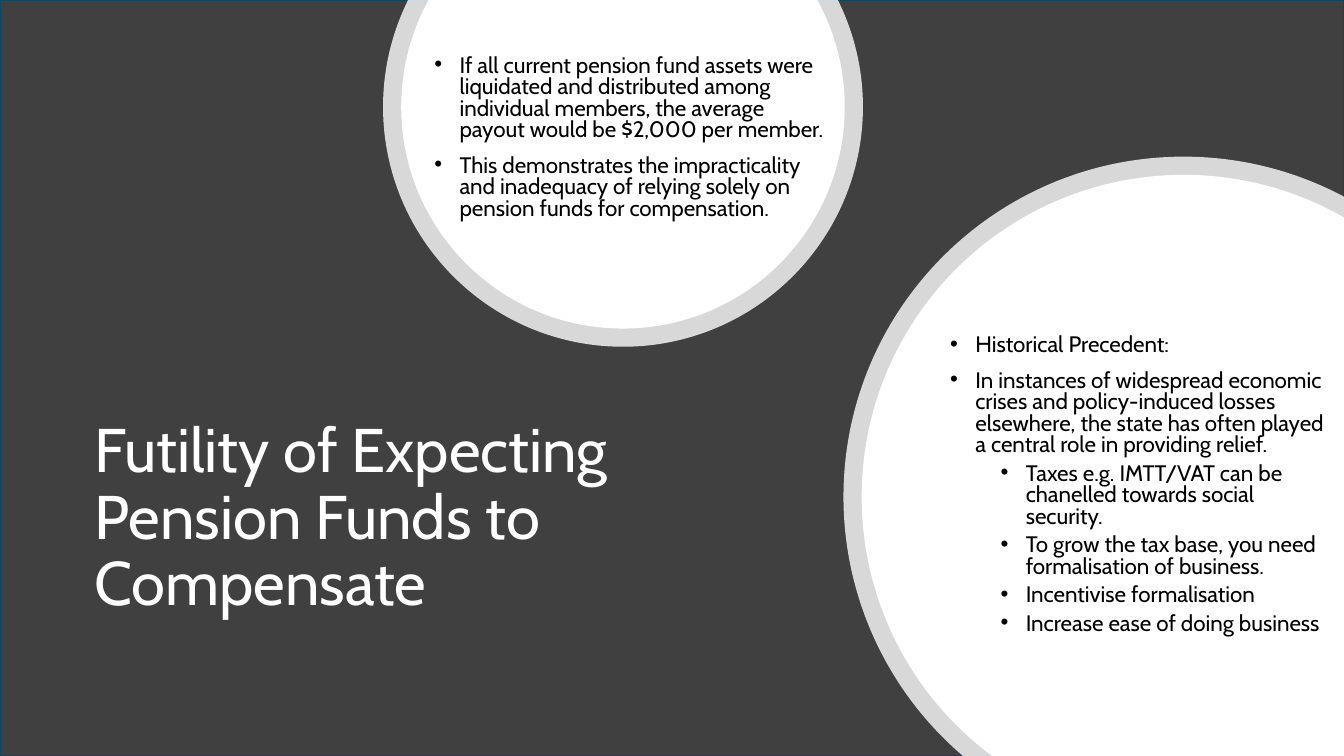
import math

import pptx
import pptx.dml.color
import pptx.enum.shapes
import pptx.enum.text
import pptx.oxml
import pptx.oxml.ns
import pptx.util

Pt = pptx.util.Pt
RGBColor = pptx.dml.color.RGBColor

CHARCOAL = RGBColor(0x40, 0x40, 0x40)
TEAL = RGBColor(0x10, 0x47, 0x60)
WHITE = RGBColor(0xFF, 0xFF, 0xFF)
BLACK = RGBColor(0, 0, 0)
FONT = "Cabin"

TITLE = "Futility of Expecting Pension Funds to Compensate"
TITLE_BOX = (60.3, 275.4, 476.6, 190.8)

CIRCLES = [
    {
        "center": (445, 76.3),
        "radius": 171.4,
        "box": (303.2, 10.3, 293, 177.1),
        "points": [
            (0, "If all current pension fund assets were liquidated and distributed "
                "among individual members, the average payout would be $2,000 per member."),
            (0, "This demonstrates the impracticality and inadequacy of relying "
                "solely on pension funds for compensation."),
        ],
    },
    {
        "center": (845.6, 355),
        "radius": 243.1,
        "box": (671.6, 212.9, 288.7, 267.8),
        "points": [
            (0, "Historical Precedent:"),
            (0, "In instances of widespread economic crises and policy-induced losses "
                "elsewhere, the state has often played a central role in providing relief."),
            (1, "Taxes e.g. IMTT/VAT can be chanelled towards social security."),
            (1, "To grow the tax base, you need formalisation of business."),
            (1, "Incentivise formalisation"),
            (1, "Increase ease of doing business"),
        ],
    },
]

WIDTH, HEIGHT = 960, 540
RING = 13
RING_OPACITY = 80
QUARTER = math.pi / 2


def visible_arc(center, radius):
    x, y = center
    if y < radius:
        rise = math.asin(y / radius)
        return -rise, math.pi + rise, []
    start = math.pi - math.asin((HEIGHT - y) / radius)
    end = 2 * math.pi - math.acos((WIDTH - x) / radius)
    return start, end, [(Pt(WIDTH), Pt(HEIGHT))]


def curve_points(center, radius, start, end):
    quarters = [n * QUARTER for n in range(4) if start < n * QUARTER < end]
    stops = [start, *quarters, end]

    def place(angle, pull):
        return (Pt(center[0] + radius * (math.cos(angle) - pull * math.sin(angle))),
                Pt(center[1] + radius * (math.sin(angle) + pull * math.cos(angle))))

    points = [place(start, 0)]
    for first, last in zip(stops, stops[1:]):
        pull = 4 / 3 * math.tan((last - first) / 4)
        points += [place(first, pull), place(last, -pull), place(last, 0)]
    return points


def add_disc(slide, center, radius, opacity=100):
    start, end, corners = visible_arc(center, radius)
    curve = curve_points(center, radius, start, end)
    builder = slide.shapes.build_freeform(*curve[0])
    builder.add_line_segments(curve[1:] + corners, close=True)
    disc = builder.convert_to_shape()

    lines = disc._element.findall(".//" + pptx.oxml.ns.qn("a:lnTo"))
    for index in range(0, len(curve) - 1, 3):
        bend = pptx.oxml.parse_xml(
            f'<a:cubicBezTo {pptx.oxml.ns.nsdecls("a")}/>')
        lines[index].addprevious(bend)
        for line in lines[index:index + 3]:
            bend.append(line[0])
            line.getparent().remove(line)

    disc.shadow.inherit = False
    disc.line.fill.background()
    disc.fill.solid()
    disc.fill.fore_color.rgb = WHITE
    if opacity < 100:
        tint = disc.fill._xPr.find(".//" + pptx.oxml.ns.qn("a:srgbClr"))
        tint.append(pptx.oxml.parse_xml(
            f'<a:alpha {pptx.oxml.ns.nsdecls("a")} val="{opacity * 1000}"/>'))


def add_frame(slide, box):
    frame = slide.shapes.add_textbox(*map(Pt, box)).text_frame
    frame.word_wrap = True
    frame.vertical_anchor = pptx.enum.text.MSO_ANCHOR.MIDDLE
    return frame


def add_words(paragraph, words, size, color, spacing):
    paragraph.line_spacing = spacing
    run = paragraph.add_run()
    run.text = words
    run.font.name = FONT
    run.font.size = Pt(size)
    run.font.color.rgb = color


def add_bullets(slide, box, points):
    frame = add_frame(slide, box)
    for index, (level, words) in enumerate(points):
        paragraph = frame.add_paragraph() if index else frame.paragraphs[0]
        paragraph.level = level
        paragraph.space_before = Pt(5 if level else 10)
        add_words(paragraph, words, 16, BLACK, 0.8)
        properties = paragraph._p.get_or_add_pPr()
        properties.set("marL", str(Pt(18 + 36 * level)))
        properties.set("indent", str(-Pt(18)))
        for tag in ('buFont typeface="Arial"', 'buChar char="•"'):
            properties.append(pptx.oxml.parse_xml(
                f'<a:{tag} {pptx.oxml.ns.nsdecls("a")}/>'))


def main():
    deck = pptx.Presentation()
    deck.slide_width, deck.slide_height = Pt(WIDTH), Pt(HEIGHT)
    slide = deck.slides.add_slide(deck.slide_layouts[6])

    backdrop = slide.shapes.add_shape(
        pptx.enum.shapes.MSO_SHAPE.RECTANGLE, 0, 0, Pt(WIDTH), Pt(HEIGHT))
    backdrop.shadow.inherit = False
    backdrop.fill.solid()
    backdrop.fill.fore_color.rgb = CHARCOAL
    backdrop.line.color.rgb = TEAL
    backdrop.line.width = Pt(1.5)

    add_words(add_frame(slide, TITLE_BOX).paragraphs[0], TITLE, 44, WHITE, 0.9)
    for circle in CIRCLES:
        add_disc(slide, circle["center"], circle["radius"], RING_OPACITY)
        add_disc(slide, circle["center"], circle["radius"] - RING)
        add_bullets(slide, circle["box"], circle["points"])

    deck.save("out.pptx")


if __name__ == "__main__":
    main()
